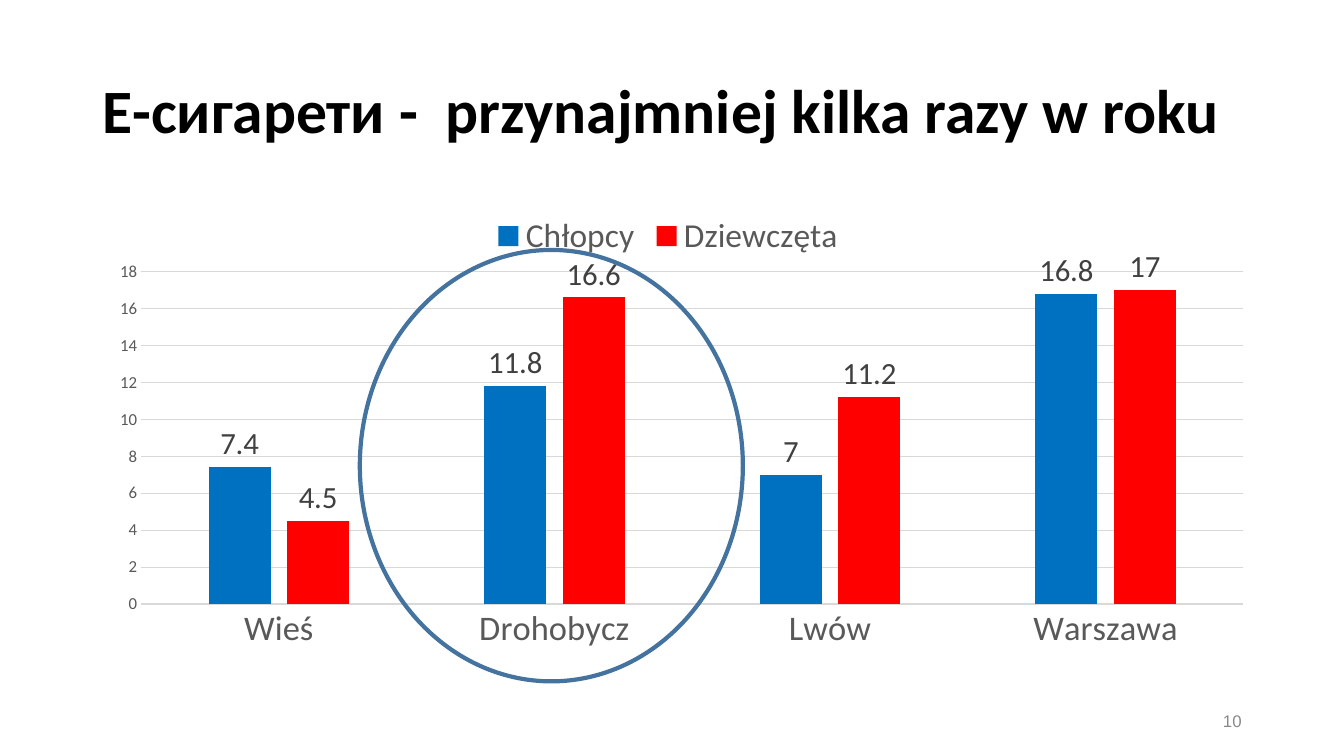
from lxml import etree
from pptx import Presentation
from pptx.chart.data import CategoryChartData
from pptx.dml.color import RGBColor
from pptx.enum.chart import XL_CHART_TYPE, XL_LABEL_POSITION, XL_LEGEND_POSITION, XL_TICK_MARK
from pptx.enum.shapes import MSO_SHAPE
from pptx.enum.text import MSO_ANCHOR, PP_ALIGN
from pptx.oxml.ns import qn
from pptx.util import Pt

COLUMNS = XL_CHART_TYPE.COLUMN_CLUSTERED
ABOVE_BAR = XL_LABEL_POSITION.OUTSIDE_END
TOP = XL_LEGEND_POSITION.TOP
NO_TICK = XL_TICK_MARK.NONE
ELLIPSE = MSO_SHAPE.OVAL
MIDDLE = MSO_ANCHOR.MIDDLE
LEFT, RIGHT = PP_ALIGN.LEFT, PP_ALIGN.RIGHT

TITLE = "Е-сигарети -  przynajmniej kilka razy w roku"
PAGE_NUMBER = "10"
PLACES = ["Wieś", "Drohobycz", "Lwów", "Warszawa"]
GROUPS = [
    ("Chłopcy", [7.4, 11.8, 7, 16.8], "0070C0"),
    ("Dziewczęta ", [4.5, 16.6, 11.2, 17], "FF0000"),
]
PLOT_AREA = {"x": 0.042, "y": 0.146, "w": 0.951, "h": 0.693}

MARGIN, CONTENT_WIDTH = 66, 828
TITLE_BOX = (MARGIN, 28.8, CONTENT_WIDTH, 104.4)
CHART_BOX = (MARGIN, 144, CONTENT_WIDTH, 342.72)
HIGHLIGHT_BOX = (257.04, 178.56, 273.6, 308.16)
NUMBER_BOX = (678, 500.4, 216, 28.8)


def points(box):
    return [Pt(length) for length in box]


def color(hex_code):
    return RGBColor.from_string(hex_code)


def style_font(font, size, hex_code, name="Calibri", bold=False):
    font.size, font.name, font.bold = Pt(size), name, bold
    font.color.rgb = color(hex_code)


def style_line(line, hex_code, width):
    line.color.rgb = color(hex_code)
    line.width = Pt(width)


def add_text(slide, box, text, align, spacing, **font_style):
    frame = slide.shapes.add_textbox(*points(box)).text_frame
    frame.word_wrap = True
    frame.vertical_anchor = MIDDLE
    paragraph = frame.paragraphs[0]
    paragraph.alignment = align
    paragraph.line_spacing = spacing
    run = paragraph.add_run()
    run.text = text
    style_font(run.font, **font_style)


def place_plot_area(chart):
    plot_area = chart.element.find(".//" + qn("c:plotArea"))
    for layout in plot_area.findall(qn("c:layout")):
        plot_area.remove(layout)
    layout = etree.Element(qn("c:layout"))
    manual = etree.SubElement(layout, qn("c:manualLayout"))
    settings = {"layoutTarget": "inner", "xMode": "edge", "yMode": "edge", **PLOT_AREA}
    for tag, value in settings.items():
        etree.SubElement(manual, qn("c:" + tag)).set("val", str(value))
    plot_area.insert(0, layout)


def add_smoking_chart(slide):
    data = CategoryChartData()
    data.categories = PLACES
    for name, shares, _ in GROUPS:
        data.add_series(name, shares)
    chart = slide.shapes.add_chart(COLUMNS, *points(CHART_BOX), data).chart
    style_font(chart.font, 10, "000000")
    chart.has_title = False
    chart.has_legend = True
    chart.legend.position = TOP
    chart.legend.include_in_layout = False
    style_font(chart.legend.font, 23.9, "595959")

    places, shares_axis = chart.category_axis, chart.value_axis
    for axis, size in ((places, 24.6), (shares_axis, 12)):
        axis.major_tick_mark = axis.minor_tick_mark = NO_TICK
        style_font(axis.tick_labels.font, size, "595959")
    style_line(places.format.line, "D9D9D9", 0.75)
    shares_axis.format.line.fill.background()
    style_line(shares_axis.major_gridlines.format.line, "D9D9D9", 0.75)
    shares_axis.minimum_scale, shares_axis.maximum_scale = 0, 18
    shares_axis.major_unit = 2

    plot = chart.plots[0]
    plot.gap_width, plot.overlap = 219, -27
    plot.vary_by_categories = False
    for series, (_, _, hex_code) in zip(plot.series, GROUPS):
        series.format.fill.solid()
        series.format.fill.fore_color.rgb = color(hex_code)
        labels = series.data_labels
        labels.show_value = True
        labels.position = ABOVE_BAR
        style_font(labels.font, 22, "404040")
    place_plot_area(chart)


def add_highlight(slide):
    highlight = slide.shapes.add_shape(ELLIPSE, *points(HIGHLIGHT_BOX))
    highlight.shadow.inherit = False
    highlight.fill.background()
    style_line(highlight.line, "43739E", 3)


def main():
    deck = Presentation()
    deck.slide_width, deck.slide_height = Pt(960), Pt(540)
    slide = deck.slides.add_slide(deck.slide_layouts[6])
    add_text(slide, TITLE_BOX, TITLE, LEFT, 0.9, size=44, hex_code="000000", bold=True)
    add_text(slide, NUMBER_BOX, PAGE_NUMBER, RIGHT, 1.0, size=12, hex_code="898989", name="Arial")
    add_smoking_chart(slide)
    add_highlight(slide)
    deck.save("out.pptx")


if __name__ == "__main__":
    main()
